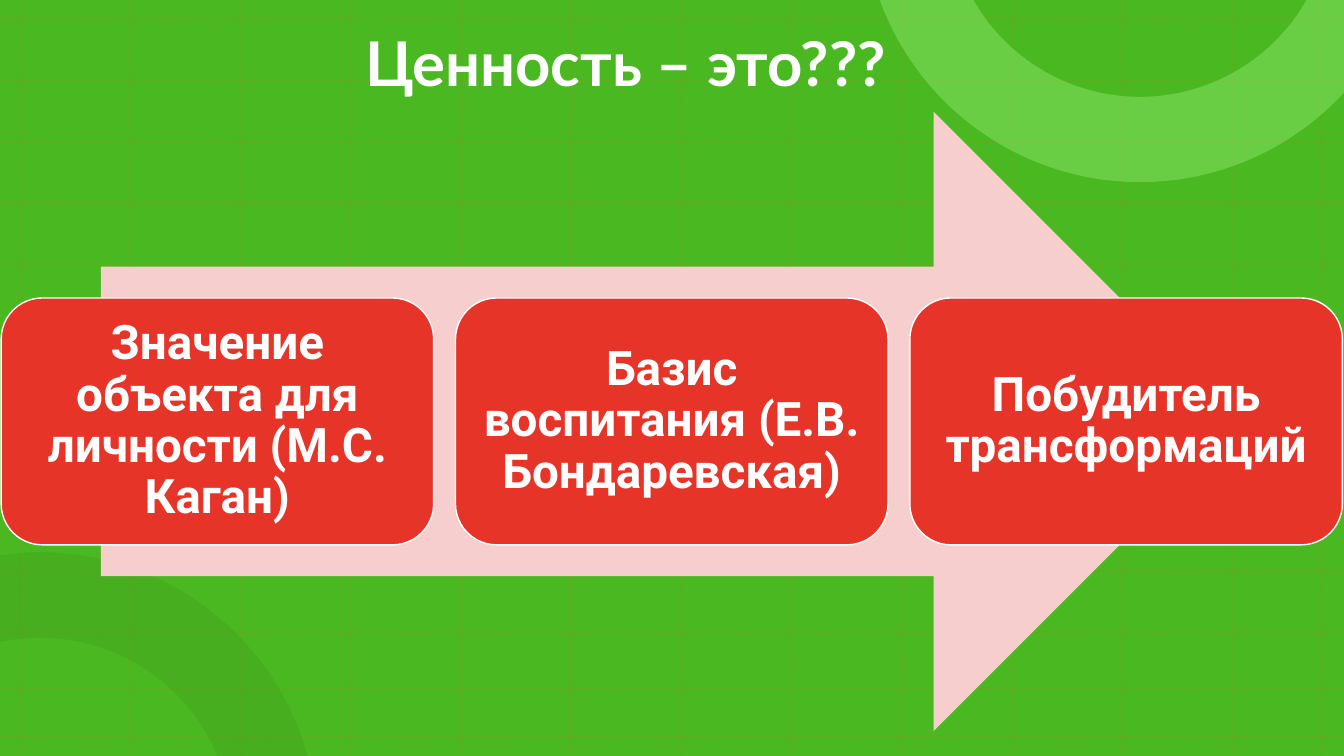
import math
from dataclasses import dataclass

from lxml import etree
from pptx import Presentation
from pptx.dml.color import RGBColor
from pptx.enum import dml, shapes, text
from pptx.oxml import ns
from pptx.util import Cm, Pt

COLORS = {
    "background": "4AB821",
    "grid": "D57117",
    "dark_ring": "388A19",
    "light_ring": "8BE46A",
    "arrow": "F6CECD",
    "card": "E73429",
    "white": "FFFFFF",
}
SLIDE_WIDTH, SLIDE_HEIGHT = 33.87, 19.05
OUTER_RADIUS, INNER_RADIUS = 6.98, 4.83
CARD_LEFT, CARD_TOP, CARD_STEP = 0.03, 7.51, 11.45
CARD_WIDTH, CARD_HEIGHT, CARD_INSET = 10.9, 6.22, 0.36

Point = tuple[float, float]


@dataclass
class Arc:
    """Upper (direction -1) or lower (direction 1) arc between two x positions."""
    center: Point
    radius: float
    direction: int
    start_x: float
    end_x: float

    def point(self, angle: float, tangent: float = 0) -> Point:
        """Point at the angle, moved along the tangent by a share of the radius."""
        center_x, center_y = self.center
        across = math.cos(angle) - tangent * math.sin(angle)
        down = math.sin(angle) + tangent * math.cos(angle)
        return center_x + self.radius * across, center_y + self.direction * self.radius * down

    def points(self) -> list[Point]:
        """Start point and the control points of two curves that meet at the crest."""
        first, last = (math.acos((x - self.center[0]) / self.radius) for x in (self.start_x, self.end_x))
        crest = math.pi / 2
        points = [self.point(first)]
        for start, end in ((first, crest), (crest, last)):
            reach = 4 / 3 * math.tan((end - start) / 4)
            points += [self.point(start, reach), self.point(end, -reach), self.point(end)]
        return points


@dataclass
class Ring:
    outer: Arc
    corners: list[Point]
    inner: Arc
    color: str
    opacity: int


def rgb(name: str) -> RGBColor:
    return RGBColor.from_string(COLORS[name])


def set_opacity(shape, percent: int) -> None:
    for color in shape.element.spPr.iter(ns.qn("a:srgbClr")):
        etree.SubElement(color, ns.qn("a:alpha"), val=str(percent * 1000))


def half_chord(center_y: float, radius: float, edge_y: float) -> float:
    """Horizontal distance from the centre to where the circle meets edge_y."""
    return math.sqrt(radius ** 2 - (center_y - edge_y) ** 2)


def bottom_left_ring() -> Ring:
    center = x, y = 1.02, 20.9
    outer_end = x + half_chord(y, OUTER_RADIUS, SLIDE_HEIGHT)
    inner_end = x + half_chord(y, INNER_RADIUS, SLIDE_HEIGHT)
    return Ring(Arc(center, OUTER_RADIUS, -1, 0, outer_end), [],
                Arc(center, INNER_RADIUS, -1, inner_end, 0), "dark_ring", 20)


def top_right_ring() -> Ring:
    center = x, y = 28.73, -2.39
    outer_half = half_chord(y, OUTER_RADIUS, 0)
    inner_half = half_chord(y, INNER_RADIUS, 0)
    return Ring(Arc(center, OUTER_RADIUS, 1, x - outer_half, SLIDE_WIDTH), [(SLIDE_WIDTH, 0)],
                Arc(center, INNER_RADIUS, 1, x + inner_half, x - inner_half), "light_ring", 50)


def bend_arcs(shape) -> None:
    """Turn the first six and the last six line segments into two curves each."""
    lines = list(shape.element.iter(ns.qn("a:lnTo")))
    count = len(lines)
    for first in (0, 3, count - 6, count - 3):
        curve = etree.Element(ns.qn("a:cubicBezTo"))
        lines[first].addprevious(curve)
        for line in lines[first:first + 3]:
            curve.append(line[0])
            line.getparent().remove(line)


def draw_ring(slide, ring: Ring) -> None:
    outline = ring.outer.points() + ring.corners + ring.inner.points()
    start, *others = [(Cm(x), Cm(y)) for x, y in outline]
    builder = slide.shapes.build_freeform(*start)
    builder.add_line_segments(others)
    shape = builder.convert_to_shape()
    bend_arcs(shape)
    shape.shadow.inherit = False
    shape.fill.solid()
    shape.fill.fore_color.rgb = rgb(ring.color)
    shape.line.fill.background()
    set_opacity(shape, ring.opacity)


def draw_grid_line(slide, start: Point, end: Point) -> None:
    line = slide.shapes.add_connector(shapes.MSO_CONNECTOR.STRAIGHT, *map(Cm, start + end))
    line.line.color.rgb = rgb("grid")
    line.line.width = Pt(1.5)
    line.line.dash_style = dml.MSO_LINE.ROUND_DOT
    set_opacity(line, 20)
    etree.SubElement(line.element.spPr, ns.qn("a:effectLst"))


def spread(first: float, last: float, count: int) -> list[float]:
    return [first + (last - first) * index / (count - 1) for index in range(count)]


def draw_grid(slide) -> None:
    for x in spread(0.51, 31.06, 12) + [33.3]:
        draw_grid_line(slide, (x, 0), (x, SLIDE_HEIGHT))
    for y in spread(0.48, 15.95, 11) + [17.35, 18.57]:
        draw_grid_line(slide, (0, y), (SLIDE_WIDTH, y))


def write(shape, words: str, font: str, size: int) -> None:
    """Fill the shape with one centred bold white paragraph."""
    frame = shape.text_frame
    frame.text = words
    frame.word_wrap = True
    frame.auto_size = text.MSO_AUTO_SIZE.NONE
    frame.vertical_anchor = text.MSO_ANCHOR.MIDDLE
    paragraph = frame.paragraphs[0]
    paragraph.alignment = text.PP_ALIGN.CENTER
    paragraph.line_spacing = 0.9
    run_font = paragraph.runs[0].font
    run_font.name = font
    run_font.size = Pt(size)
    run_font.bold = True
    run_font.color.rgb = rgb("white")


def draw_title(slide, words: str) -> None:
    title = slide.shapes.title
    title.left, title.top, title.width, title.height = map(Cm, (0.48, 0.23, 30.58, 2.9))
    write(title, words, "Lato", 44)
    slide.shapes.element.append(title.element)  # bring above the grid


def add_filled_shape(slide, kind, box: tuple[float, float, float, float], color: str):
    shape = slide.shapes.add_shape(kind, *map(Cm, box))
    shape.shadow.inherit = False
    shape.fill.solid()
    shape.fill.fore_color.rgb = rgb(color)
    return shape


def draw_arrow(slide) -> None:
    arrow = add_filled_shape(slide, shapes.MSO_SHAPE.RIGHT_ARROW, (2.54, 2.82, 28.79, 15.6), "arrow")
    arrow.line.fill.background()


def draw_card(slide, left: float, words: str) -> None:
    card = add_filled_shape(slide, shapes.MSO_SHAPE.ROUNDED_RECTANGLE,
                            (left, CARD_TOP, CARD_WIDTH, CARD_HEIGHT), "card")
    card.line.color.rgb = rgb("white")
    card.line.width = Pt(1)
    frame = card.text_frame
    frame.margin_left = frame.margin_right = Cm(CARD_INSET)
    frame.margin_top = frame.margin_bottom = Cm(CARD_INSET)
    write(card, words, "Roboto", 34)


def main() -> None:
    presentation = Presentation()
    presentation.slide_width, presentation.slide_height = Cm(SLIDE_WIDTH), Cm(SLIDE_HEIGHT)
    slide = presentation.slides.add_slide(presentation.slide_layouts[5])
    slide.background.fill.solid()
    slide.background.fill.fore_color.rgb = rgb("background")
    draw_grid(slide)
    for ring in (bottom_left_ring(), top_right_ring()):
        draw_ring(slide, ring)
    draw_title(slide, "Ценность – это???")
    draw_arrow(slide)
    meanings = ("Значение объекта для личности (М.С. Каган)",
                "Базис воспитания (Е.В. Бондаревская)", "Побудитель трансформаций")
    for index, meaning in enumerate(meanings):
        draw_card(slide, CARD_LEFT + CARD_STEP * index, meaning)
    presentation.save("out.pptx")


if __name__ == "__main__":
    main()
